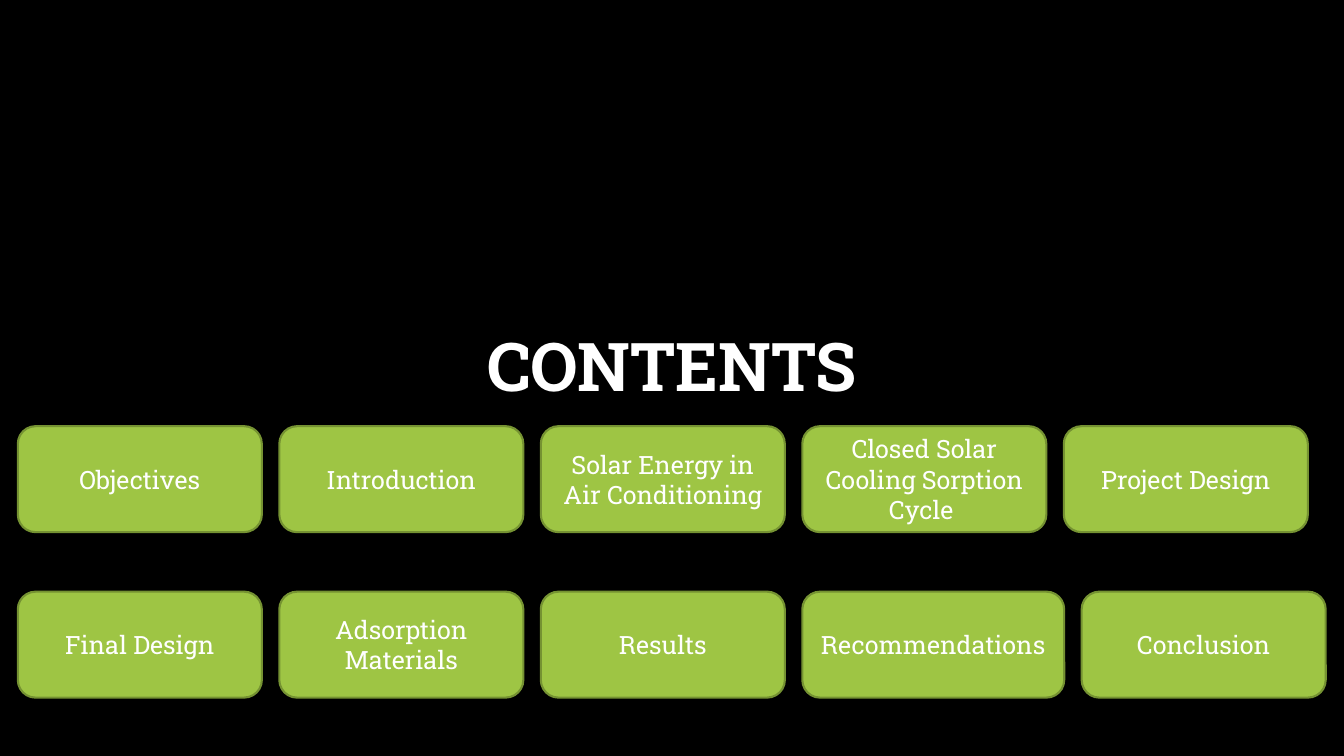
from dataclasses import dataclass

from pptx import Presentation
from pptx import util as u
from pptx.dml.color import RGBColor
from pptx.enum import shapes, text
from pptx.slide import Slide
from pptx.text.text import TextFrame

BLACK = RGBColor(0x00, 0x00, 0x00)
WHITE = RGBColor(0xFF, 0xFF, 0xFF)
GREEN = RGBColor(0x9E, 0xC5, 0x44)
DARK_GREEN = RGBColor(0x75, 0x92, 0x32)
FONT = "Roboto Slab"

# Lengths in centimetres
LEFT_MARGIN = 0.45
GAP = 0.44
BOX_HEIGHT = 2.67


@dataclass
class Topic:
    label: str
    width: float = 6.15


@dataclass
class TopicRow:
    top: float
    topics: list[Topic]


ROWS = [
    TopicRow(10.74, [
        Topic("Objectives"),
        Topic("Introduction"),
        Topic("Solar Energy in Air Conditioning"),
        Topic("Closed Solar Cooling Sorption Cycle "),
        Topic("Project Design"),
    ]),
    TopicRow(14.91, [
        Topic("Final Design"),
        Topic("Adsorption Materials"),
        Topic("Results"),
        Topic("Recommendations", width=6.6),
        Topic("Conclusion"),
    ]),
]


def write_text(text_frame: TextFrame, words: str, size: int, bold: bool,
               anchor: text.MSO_ANCHOR) -> None:
    """Put one centred white paragraph into a text frame."""
    text_frame.text = words
    text_frame.word_wrap = True
    text_frame.auto_size = text.MSO_AUTO_SIZE.NONE
    text_frame.vertical_anchor = anchor
    paragraph = text_frame.paragraphs[0]
    paragraph.alignment = text.PP_ALIGN.CENTER
    font = paragraph.runs[0].font
    font.name = FONT
    font.size = u.Pt(size)
    font.bold = bold
    font.color.rgb = WHITE


def add_title(slide: Slide) -> None:
    title = slide.shapes.title
    title.left, title.top = u.Cm(5.82), u.Cm(2.11)
    title.width, title.height = u.Cm(22.23), u.Cm(8.26)
    write_text(title.text_frame, "CONTENTS", 48, True, text.MSO_ANCHOR.BOTTOM)
    paragraph = title.text_frame.paragraphs[0]
    paragraph.line_spacing = 0.9
    paragraph.space_before = u.Pt(0)


def add_topic(slide: Slide, topic: Topic, left: float, top: float) -> None:
    shape = slide.shapes.add_shape(
        shapes.MSO_SHAPE.ROUNDED_RECTANGLE,
        u.Cm(left), u.Cm(top), u.Cm(topic.width), u.Cm(BOX_HEIGHT))
    shape.shadow.inherit = False
    shape.fill.solid()
    shape.fill.fore_color.rgb = GREEN
    shape.line.color.rgb = DARK_GREEN
    shape.line.width = u.Pt(1.5)
    write_text(shape.text_frame, topic.label, 18, False, text.MSO_ANCHOR.MIDDLE)


def add_row(slide: Slide, row: TopicRow) -> None:
    """Place the topics side by side with equal gaps."""
    left = LEFT_MARGIN
    for topic in row.topics:
        add_topic(slide, topic, left, row.top)
        left += topic.width + GAP


def main() -> None:
    presentation = Presentation()
    presentation.slide_width = u.Cm(33.87)
    presentation.slide_height = u.Cm(19.05)

    # Title-only slide on black
    slide = presentation.slides.add_slide(presentation.slide_layouts[5])
    slide.background.fill.solid()
    slide.background.fill.fore_color.rgb = BLACK

    # Heading and the two rows of topics
    add_title(slide)
    for row in ROWS:
        add_row(slide, row)

    presentation.save("out.pptx")


if __name__ == "__main__":
    main()
